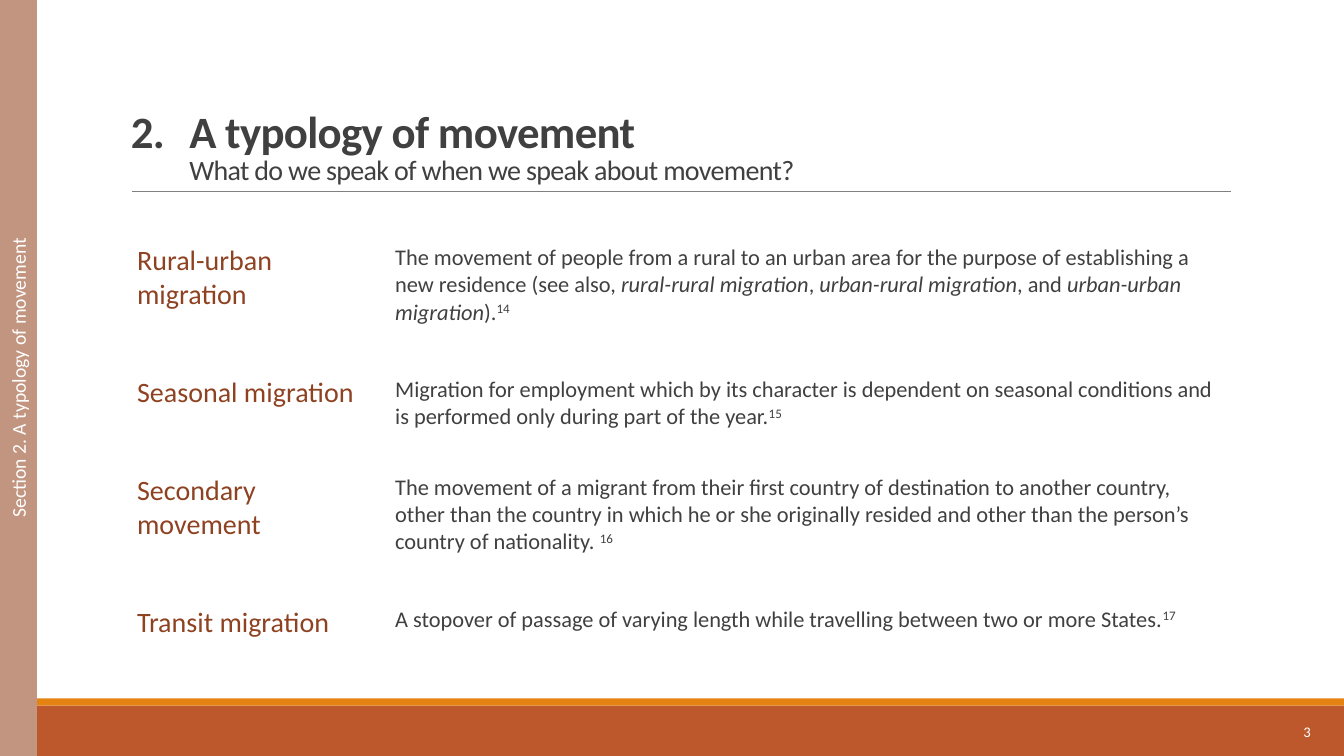
import pptx
import pptx.util
import pptx.dml.color
import pptx.enum.shapes
import pptx.enum.text
import pptx.oxml
import pptx.oxml.ns

Inches = pptx.util.Inches
Pt = pptx.util.Pt
Align = pptx.enum.text.PP_ALIGN
Anchor = pptx.enum.text.MSO_ANCHOR

COLORS = {
    "text": "404040",
    "term": "8E4221",
    "footer": "BD582C",
    "stripe": "E48312",
    "sidebar": "C29580",
    "rule": "808080",
    "white": "FFFFFF",
}

# Each definition is a list of (text, style) pieces.
TERMS = [
    (1.31, "Rural-urban migration", [
        ("The movement of people from a rural to an urban area for the purpose of "
         "establishing a new residence (see also, ", ""),
        ("rural-rural migration", "italic"),
        (", ", ""),
        ("urban-rural migration", "italic"),
        (", and ", ""),
        ("urban-urban migration", "italic"),
        (").", ""),
        ("14", "note"),
    ]),
    (0.97, "Seasonal migration", [
        ("Migration for employment which by its character is dependent on seasonal "
         "conditions and is performed only during part of the year.", ""),
        ("15", "note"),
    ]),
    (1.31, "Secondary movement", [
        ("The movement of a migrant from their first country of destination to another "
         "country, other than the country in which he or she originally resided and other "
         "than the person’s country of nationality. ", ""),
        ("16", "note"),
    ]),
    (0.74, "Transit migration", [
        ("A stopover of passage of varying length while travelling between two or more "
         "States.", ""),
        ("17", "note"),
    ]),
]


class SlideBuilder:
    font_name = "Calibri"

    def __init__(self, slide):
        self.slide = slide

    def color(self, name):
        return pptx.dml.color.RGBColor.from_string(COLORS[name])

    def style(self, font, size, color):
        font.name = self.font_name
        font.size = Pt(size)
        font.color.rgb = self.color(color)

    def bar(self, left, top, width, height, color):
        shape = self.slide.shapes.add_shape(
            pptx.enum.shapes.MSO_SHAPE.RECTANGLE,
            Inches(left), Inches(top), Inches(width), Inches(height))
        shape.shadow.inherit = False
        shape.fill.solid()
        shape.fill.fore_color.rgb = self.color(color)
        shape.line.fill.background()
        return shape

    def sidebar(self, width, height, text):
        shape = self.bar(0, 0, width, height, "sidebar")
        shape.line.color.rgb = self.color("sidebar")
        shape.line.width = Pt(1.25)
        frame = shape.text_frame
        frame.vertical_anchor = Anchor.MIDDLE
        frame._txBody.bodyPr.set("vert", "vert270")
        paragraph = frame.paragraphs[0]
        paragraph.text = text
        paragraph.alignment = Align.CENTER
        self.style(paragraph.font, 14, "white")

    def rule(self, left, right, top):
        line = self.slide.shapes.add_connector(
            pptx.enum.shapes.MSO_CONNECTOR.STRAIGHT,
            Inches(left), Inches(top), Inches(right), Inches(top))
        line.line.color.rgb = self.color("rule")
        line.line.width = Pt(0.5)
        line._element.spPr.append(pptx.oxml.parse_xml(
            "<a:effectLst %s/>" % pptx.oxml.ns.nsdecls("a")))

    def text_box(self, left, top, width, height, anchor):
        """Add an empty wrapping box and return its first paragraph."""
        box = self.slide.shapes.add_textbox(
            Inches(left), Inches(top), Inches(width), Inches(height))
        box.text_frame.word_wrap = True
        box.text_frame.vertical_anchor = anchor
        return box.text_frame.paragraphs[0]

    def title(self, heading, question):
        paragraph = self.text_box(1.2, 0.31, 11, 1.59, Anchor.BOTTOM)
        paragraph.line_spacing = 0.85
        properties = paragraph._p.get_or_add_pPr()
        properties.set("marL", str(Inches(0.58)))
        properties.set("indent", str(Inches(-0.58)))
        for text, size, bold in ((heading, 32, True), (question, 20, False)):
            if paragraph.runs:
                paragraph.add_line_break()
            run = paragraph.add_run()
            run.text = text
            self.style(run.font, size, "text")
            run.font.bold = bold
            run._r.get_or_add_rPr().set("spc", "-50")

    def page_number(self, number):
        paragraph = self.text_box(11.67, 7.06, 1.43, 0.4, Anchor.MIDDLE)
        paragraph.text = number
        paragraph.alignment = Align.RIGHT
        self.style(paragraph.font, 10.5, "white")

    def cell(self, cell, pieces, size, color):
        cell.fill.background()
        paragraph = cell.text_frame.paragraphs[0]
        self.style(paragraph.font, size, color)
        for text, style in pieces:
            run = paragraph.add_run()
            run.text = text
            self.style(run.font, size, color)
            if style == "italic":
                run.font.italic = True
            elif style == "note":
                run._r.get_or_add_rPr().set("baseline", "30000")

    def glossary(self, left, top, widths, terms):
        height = sum(row_height for row_height, _, _ in terms)
        table = self.slide.shapes.add_table(
            len(terms), len(widths), Inches(left), Inches(top),
            Inches(sum(widths)), Inches(height)).table
        table.first_row = False
        table.horz_banding = False
        # The plain style without grid keeps the cells free of borders.
        table._tbl.tblPr.find(pptx.oxml.ns.qn("a:tableStyleId")).text = (
            "{2D5ABB26-0587-4C30-8999-92F81FD0307C}")
        for column, width in zip(table.columns, widths):
            column.width = Inches(width)
        for index, (row_height, term, definition) in enumerate(terms):
            table.rows[index].height = Inches(row_height)
            self.cell(table.cell(index, 0), [(term, "")], 20, "term")
            self.cell(table.cell(index, 1), definition, 16, "text")


def main():
    presentation = pptx.Presentation()
    presentation.slide_width = Inches(13.33)
    presentation.slide_height = Inches(7.5)
    builder = SlideBuilder(presentation.slides.add_slide(presentation.slide_layouts[6]))
    builder.bar(0, 7, 13.33, 0.5, "footer")
    builder.bar(0, 6.93, 13.33, 0.07, "stripe")
    builder.rule(1.31, 12.21, 1.9)
    builder.title("2.\tA typology of movement",
                  "What do we speak of when we speak about movement?")
    builder.glossary(1.26, 2.37, (2.56, 8.44), TERMS)
    builder.page_number("3")
    builder.sidebar(0.36, 7.5, "Section 2. A typology of movement")
    presentation.save("out.pptx")


if __name__ == "__main__":
    main()
